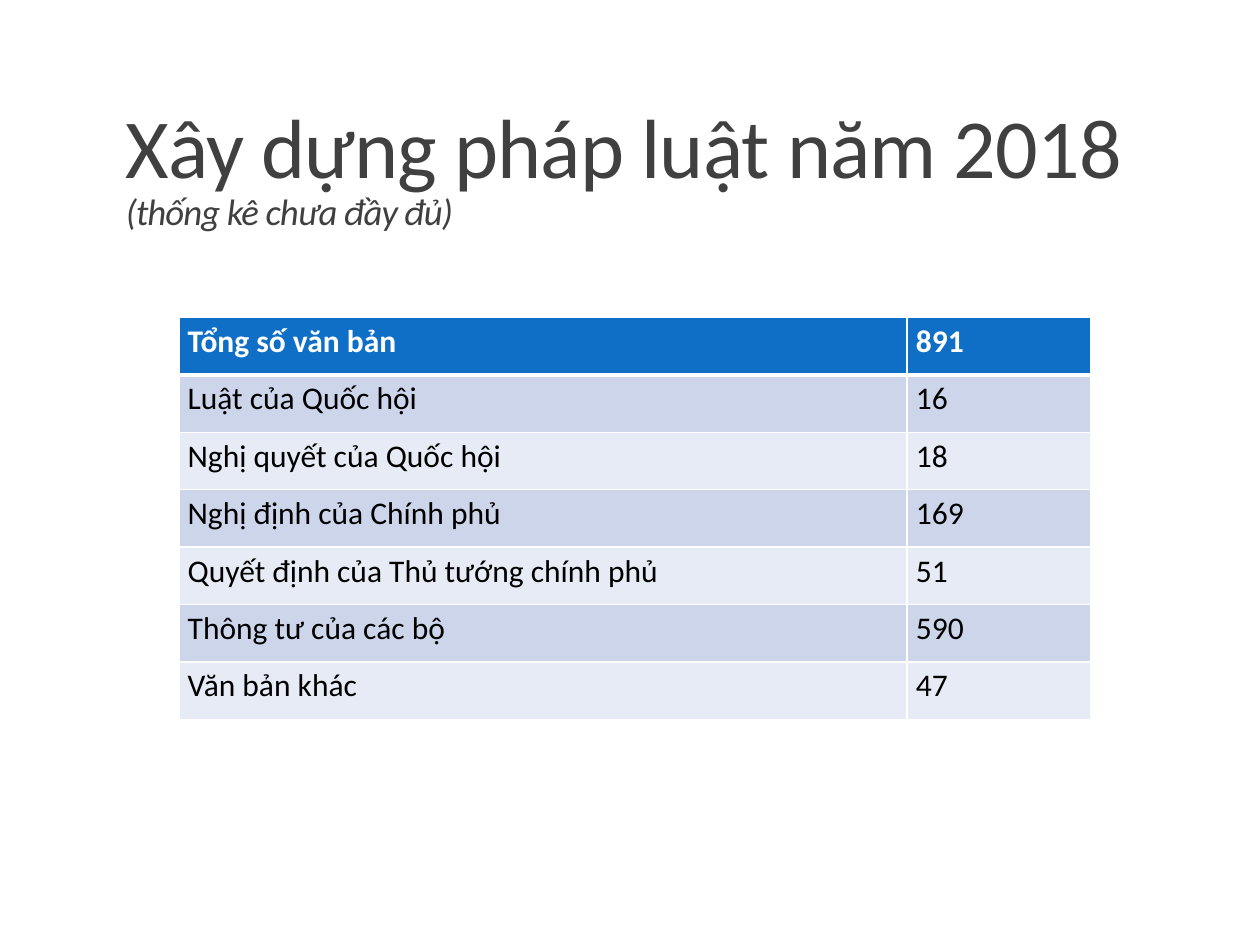
from pptx import Presentation
from pptx.dml.color import RGBColor as RGB
from pptx.enum.text import MSO_ANCHOR as Anchor
from pptx.oxml import parse_xml
from pptx.oxml.ns import nsdecls
from pptx.util import Inches, Pt

COLORS = {
    "title": "404040",
    "header": "0F6FC6",
    "band_dark": "CCD5EA",
    "band_light": "E7EBF5",
    "white": "FFFFFF",
    "black": "000000",
}
DOCUMENT_COUNTS = [
    ("Tổng số văn bản", "891"),
    ("Luật của Quốc hội", "16"),
    ("Nghị quyết của Quốc hội", "18"),
    ("Nghị định của Chính phủ", "169"),
    ("Quyết định của Thủ tướng chính phủ", "51"),
    ("Thông tư của các bộ", "590"),
    ("Văn bản khác", "47"),
]


def set_attributes(target, values):
    for name, value in values.items():
        setattr(target, name, value)


class SlideBuilder:
    font_name = "Calibri"
    cell_format = {
        "margin_left": Inches(0.07),
        "margin_right": Inches(0.07),
        "margin_top": Inches(0.04),
        "margin_bottom": Inches(0.04),
    }

    def __init__(self, slide):
        self.slide = slide

    def add_run(self, paragraph, text, color, **font_format):
        run = paragraph.add_run()
        run.text = text
        set_attributes(run.font, {"name": self.font_name, **font_format})
        run.font.color.rgb = RGB.from_string(COLORS[color])
        return run

    def add_title(self, lines, left, top, width, height):
        """Stack (text, font format) lines in one bottom-anchored paragraph."""
        box = self.slide.shapes.add_textbox(
            Inches(left), Inches(top), Inches(width), Inches(height))
        set_attributes(box.text_frame, {
            "word_wrap": True, "vertical_anchor": Anchor.BOTTOM})
        paragraph = box.text_frame.paragraphs[0]
        paragraph.line_spacing = 0.85
        for index, (text, font_format) in enumerate(lines):
            if index:
                paragraph.add_line_break()
            run = self.add_run(paragraph, text, "title", **font_format)
            run.font._element.set("spc", "-50")

    def add_borders(self, cell, bottom_width):
        properties = cell._tc.get_or_add_tcPr()
        for side, width in zip("LRTB", (1, 1, 1, bottom_width)):
            properties.append(parse_xml(
                f'<a:ln{side} {nsdecls("a")} w="{Pt(width)}"><a:solidFill>'
                f'<a:srgbClr val="{COLORS["white"]}"/></a:solidFill></a:ln{side}>'))

    def add_table(self, rows, left, top, column_widths, height):
        table = self.slide.shapes.add_table(
            len(rows), len(column_widths), Inches(left), Inches(top),
            Inches(sum(column_widths)), Inches(height)).table
        for column, width in zip(table.columns, column_widths):
            column.width = Inches(width)
        for row_index, row in enumerate(rows):
            is_header = row_index == 0
            band = "band_dark" if row_index % 2 else "band_light"
            for column_index, text in enumerate(row):
                cell = table.cell(row_index, column_index)
                set_attributes(cell, self.cell_format)
                self.add_borders(cell, 3 if is_header else 1)
                cell.fill.solid()
                cell.fill.fore_color.rgb = RGB.from_string(
                    COLORS["header" if is_header else band])
                self.add_run(cell.text_frame.paragraphs[0], text,
                             "white" if is_header else "black",
                             size=Pt(18), bold=is_header)


def main():
    presentation = Presentation()
    set_attributes(presentation, {
        "slide_width": Inches(10), "slide_height": Inches(7.5)})
    builder = SlideBuilder(
        presentation.slides.add_slide(presentation.slide_layouts[6]))
    builder.add_title([
        ("Xây dựng pháp luật năm 2018", {"size": Pt(48)}),
        ("(thống kê chưa đầy đủ)", {"size": Pt(21), "italic": True}),
    ], 0.9, 0.31, 8.25, 1.59)
    builder.add_table(DOCUMENT_COUNTS, 1.42, 2.52, (5.78, 1.46), 3.19)
    presentation.save("out.pptx")


if __name__ == "__main__":
    main()
